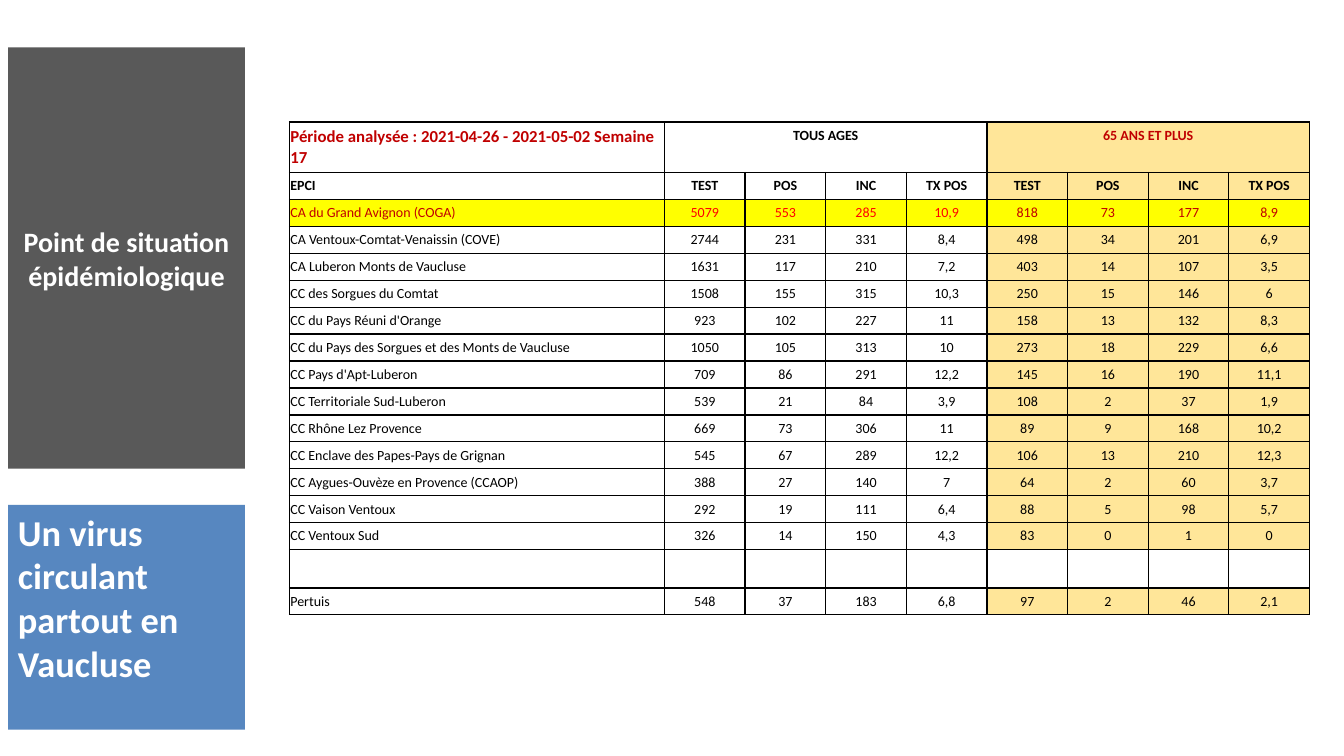
from dataclasses import dataclass

from lxml import etree
from pptx import Presentation
from pptx.dml.color import RGBColor
from pptx.enum.shapes import MSO_SHAPE
from pptx.enum.text import MSO_ANCHOR, MSO_AUTO_SIZE, PP_ALIGN
from pptx.oxml.ns import qn
from pptx.util import Inches, Pt

RECTANGLE = MSO_SHAPE.RECTANGLE
LEFT, CENTER = PP_ALIGN.LEFT, PP_ALIGN.CENTER
TOP, MIDDLE = MSO_ANCHOR.TOP, MSO_ANCHOR.MIDDLE
NO_FIT = MSO_AUTO_SIZE.NONE
TITLE_ONLY = 5

MEASURES = ["TEST", "POS", "INC", "TX POS"]
AREAS = [
    "CA du Grand Avignon (COGA)|5079|553|285|10,9|818|73|177|8,9",
    "CA Ventoux-Comtat-Venaissin (COVE)|2744|231|331|8,4|498|34|201|6,9",
    "CA Luberon Monts de Vaucluse|1631|117|210|7,2|403|14|107|3,5",
    "CC des Sorgues du Comtat|1508|155|315|10,3|250|15|146|6",
    "CC du Pays Réuni d'Orange|923|102|227|11|158|13|132|8,3",
    "CC du Pays des Sorgues et des Monts de Vaucluse|1050|105|313|10|273|18|229|6,6",
    "CC Pays d'Apt-Luberon|709|86|291|12,2|145|16|190|11,1",
    "CC Territoriale Sud-Luberon|539|21|84|3,9|108|2|37|1,9",
    "CC Rhône Lez Provence|669|73|306|11|89|9|168|10,2",
    "CC Enclave des Papes-Pays de Grignan|545|67|289|12,2|106|13|210|12,3",
    "CC Aygues-Ouvèze en Provence (CCAOP)|388|27|140|7|64|2|60|3,7",
    "CC Vaison Ventoux|292|19|111|6,4|88|5|98|5,7",
    "CC Ventoux Sud|326|14|150|4,3|83|0|1|0",
]
PERTUIS = "Pertuis|548|37|183|6,8|97|2|46|2,1"


@dataclass(frozen=True)
class Theme:
    """Colours and type sizes of the slide."""

    font: str = "Calibri"
    white: str = "FFFFFF"
    black: str = "000000"
    grey: str = "595959"
    blue: str = "4F81BD"
    dark_red: str = "C00000"
    red: str = "FF0000"
    yellow: str = "FFFF00"
    sand: str = "FFE699"
    title_size: int = 20
    message_size: int = 26
    period_size: int = 12
    table_size: int = 10
    border_width: float = 0.96


class SlideBuilder:
    """Draws elements placed in percent of the slide's width and height."""

    def __init__(self, deck, theme):
        """Add a title slide page to the deck."""
        self.deck = deck
        self.theme = theme
        self.page = deck.slides.add_slide(deck.slide_layouts[TITLE_ONLY])

    def across(self, percent):
        """Return a share of the slide's width."""
        return round(self.deck.slide_width * percent / 100)

    def down(self, percent):
        """Return a share of the slide's height."""
        return round(self.deck.slide_height * percent / 100)

    def area(self, left, top, width, height):
        """Return the four lengths of an area."""
        return self.across(left), self.down(top), self.across(width), self.down(height)

    def paint(self, item, color):
        """Fill an item with a solid colour."""
        item.fill.solid()
        item.fill.fore_color.rgb = RGBColor.from_string(color)

    def set_text(self, frame, text, size, color, bold=True, align=LEFT):
        """Set one formatted paragraph."""
        para = frame.paragraphs[0]
        para.text = text
        para.alignment = align
        para.font.name = self.theme.font
        para.font.size = Pt(size)
        para.font.bold = bold
        para.font.color.rgb = RGBColor.from_string(color)

    def title(self, text, place):
        """Place the title on a grey panel."""
        box = self.page.shapes.title
        box.left, box.top, box.width, box.height = self.area(*place)
        self.paint(box, self.theme.grey)
        frame = box.text_frame
        frame.word_wrap = True
        frame.auto_size = NO_FIT
        frame.vertical_anchor = MIDDLE
        self.set_text(frame, text, self.theme.title_size, self.theme.white, align=CENTER)

    def panel(self, place, opacity):
        """Draw a blue panel without an outline."""
        box = self.page.shapes.add_shape(RECTANGLE, *self.area(*place))
        box.shadow.inherit = False
        box.line.fill.background()
        self.paint(box, self.theme.blue)
        color = box.element.spPr.find(qn("a:solidFill"))[0]
        etree.SubElement(color, qn("a:alpha"), val=str(opacity * 1000))

    def message(self, text, place):
        """Add the key message."""
        frame = self.page.shapes.add_textbox(*self.area(*place)).text_frame
        frame.word_wrap = True
        self.set_text(frame, text, self.theme.message_size, self.theme.white)

    def border(self, cell):
        """Draw the four sides of a cell."""
        properties = cell._tc.get_or_add_tcPr()
        for index, side in enumerate(("a:lnL", "a:lnR", "a:lnT", "a:lnB")):
            line = etree.Element(qn(side), w=str(Pt(self.theme.border_width)))
            fill = etree.SubElement(line, qn("a:solidFill"))
            etree.SubElement(fill, qn("a:srgbClr"), val=self.theme.black)
            properties.insert(index, line)

    def cell_style(self, row, column, is_blank):
        """Return the fill and text colours of a cell."""
        theme = self.theme
        senior = column > len(MEASURES)
        if row == 2:
            return theme.yellow, theme.red if 0 < column and not senior else theme.dark_red
        fill = theme.sand if senior and not is_blank else None
        accent = row == 0 and (column == 0 or senior)
        return fill, theme.dark_red if accent else theme.black

    def table(self, rows, place, widths, heights):
        """Add the table of test results by age group."""
        table = self.page.shapes.add_table(len(rows), len(widths), *self.area(*place)).table
        table.first_row = table.horz_banding = False
        for column, width in zip(table.columns, widths):
            column.width = self.across(width)
        for line, height in zip(table.rows, heights):
            line.height = self.down(height)
        for row, texts in enumerate(rows):
            for column, text in enumerate(texts):
                cell = table.cell(row, column)
                cell.margin_left = cell.margin_right = Inches(0.01)
                fill, color = self.cell_style(row, column, not any(texts))
                if fill:
                    self.paint(cell, fill)
                else:
                    cell.fill.background()
                cell.vertical_anchor = TOP
                size = self.theme.table_size if row or column else self.theme.period_size
                align = CENTER if column else LEFT
                self.set_text(cell.text_frame, text, size, color, row < 2, align)
                self.border(cell)
        span = len(MEASURES)
        for first in (1, 1 + span):
            table.cell(0, first).merge(table.cell(0, first + span - 1))


def main():
    """Build the epidemic situation slide."""
    deck = Presentation()
    deck.slide_width, deck.slide_height = Inches(13.33), Inches(7.5)
    builder = SlideBuilder(deck, Theme())
    builder.title("Point de situation épidémiologique", (0.6, 6.27, 17.63, 55.73))
    builder.panel((0.6, 66.8, 17.63, 29.73), opacity=95)
    builder.message("Un virus circulant partout en Vaucluse", (0.6, 66.8, 15.9, 28.13))
    gap = [""] * (len(MEASURES) - 1)
    period = "Période analysée : 2021-04-26 - 2021-05-02 Semaine 17"
    rows = [
        [period, "TOUS AGES", *gap, "65 ANS ET PLUS", *gap],
        ["EPCI", *MEASURES, *MEASURES],
        *(area.split("|") for area in AREAS),
        [""] * (1 + 2 * len(MEASURES)),
        PERTUIS.split("|"),
    ]
    widths = [27.91] + [6] * 2 * len(MEASURES)
    heights = [6.13] + [3.33] * (1 + len(AREAS)) + [5.07, 3.33]
    builder.table(rows, (21.53, 16.13, sum(widths), sum(heights)), widths, heights)
    deck.save("out.pptx")


if __name__ == "__main__":
    main()
